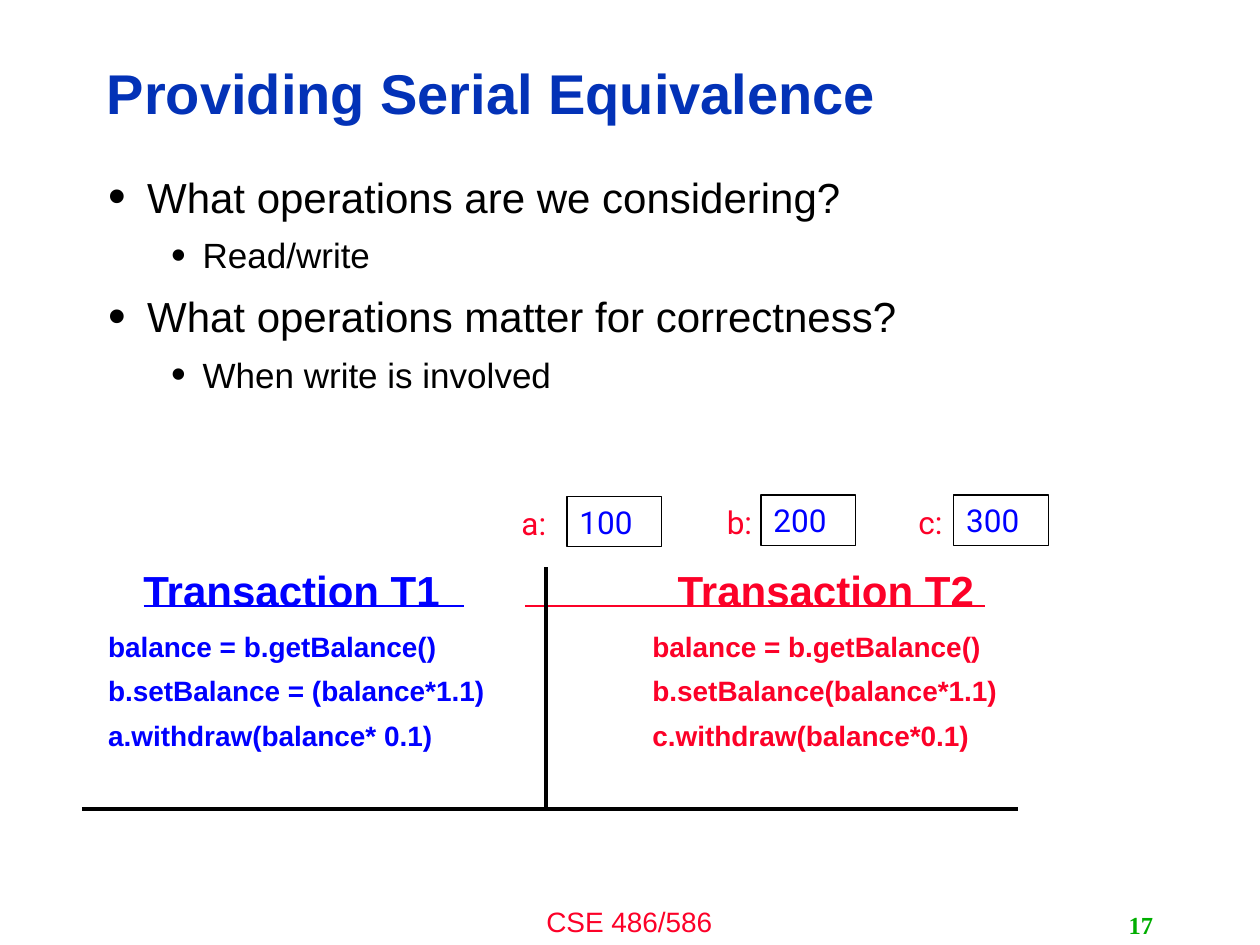
from lxml import etree
from pptx import Presentation
from pptx.dml.color import RGBColor
from pptx.enum.shapes import MSO_CONNECTOR, MSO_SHAPE
from pptx.enum.text import MSO_ANCHOR, PP_ALIGN
from pptx.oxml.ns import qn
from pptx.util import Inches, Pt

STRAIGHT = MSO_CONNECTOR.STRAIGHT
RECTANGLE = MSO_SHAPE.RECTANGLE
TOP, MIDDLE = MSO_ANCHOR.TOP, MSO_ANCHOR.MIDDLE
LEFT, CENTER, RIGHT = PP_ALIGN.LEFT, PP_ALIGN.CENTER, PP_ALIGN.RIGHT

CELL = Inches(0.1)
COLUMNS, ROWS = 100, 75
BLACK, BLUE, RED, NAVY, GREEN = "000000", "0000FF", "FC0128", "0332B7", "00AE00"

deck = Presentation()
deck.slide_width, deck.slide_height = COLUMNS * CELL, ROWS * CELL
slide = deck.slides.add_slide(deck.slide_layouts[6])


def write(text, frame, size=18, font="Arial", color=BLACK, bold=False, align=LEFT,
          anchor=TOP, spacing=1.0, before=0, hanging=None):
    frame.word_wrap = True
    frame.vertical_anchor = anchor
    first = frame.paragraphs[0]
    paragraph = frame.add_paragraph() if first.runs else first
    paragraph.alignment = align
    paragraph.line_spacing = spacing
    paragraph.space_before = Pt(before)
    run = paragraph.add_run()
    run.text = text
    run.font.size, run.font.name, run.font.bold = Pt(size), font, bold
    run.font.color.rgb = RGBColor.from_string(color)
    if hanging:
        margin, indent = hanging
        properties = paragraph._p.get_or_add_pPr()
        properties.set("marL", str(int(margin * CELL)))
        properties.set("indent", str(int(-indent * CELL)))
        etree.SubElement(properties, qn("a:buSzPct"), val="120000")
        etree.SubElement(properties, qn("a:buFont"), typeface="Arial")
        etree.SubElement(properties, qn("a:buChar"), char="•")


def rule(x1, y1, x2, y2, color=BLACK, width=2.25):
    ends = [int(value * CELL) for value in (x1, y1, x2, y2)]
    line = slide.shapes.add_connector(STRAIGHT, *ends)
    line.line.color.rgb = RGBColor.from_string(color)
    line.line.width = Pt(width)
    etree.SubElement(line._element.spPr, qn("a:effectLst"))


single_lines = [
    ("Providing Serial Equivalence", (7.5, 3.6, 79.8, 8.1),
     dict(size=32, color=NAVY, bold=True, anchor=MIDDLE, spacing=0.9)),
    ("CSE 486/586", (33.3, 71.3, 33.3, 3.7), dict(size=16, color=RED, align=CENTER)),
    ("17", (71.7, 71.8, 20.8, 3.2),
     dict(size=14, font="Times New Roman", color=GREEN, bold=True, align=RIGHT, anchor=MIDDLE)),
]
for text, place, style in single_lines:
    box = slide.shapes.add_textbox(*[int(value * CELL) for value in place])
    write(text, box.text_frame, **style)

questions = slide.shapes.add_textbox(
    *[int(value * CELL) for value in (7.6, 13.1, 84, 20)]).text_frame
for question, answer in [
    ("What operations are we considering?", "Read/write"),
    ("What operations matter for correctness?", "When write is involved"),
]:
    write(question, questions, size=24, before=8.5, hanging=(3.1, 3.1))
    write(answer, questions, size=20, before=7, hanging=(7.5, 2.5))

transactions = [
    ("Transaction T1", BLUE, 7.6, 10.4, (11.4, 36.8),
     ["balance = b.getBalance()", "b.setBalance = (balance*1.1)", "a.withdraw(balance* 0.1)"]),
    ("Transaction T2", RED, 50.8, 52.8, (41.7, 78.2),
     ["balance = b.getBalance()", "b.setBalance(balance*1.1)", "c.withdraw(balance*0.1)"]),
]
for heading, color, code_left, heading_left, underline, operations in transactions:
    title = slide.shapes.add_textbox(
        *[int(value * CELL) for value in (heading_left, 44.3, 28, 4.6)])
    write(heading, title.text_frame, size=24, color=color, bold=True)
    rule(underline[0], 48.1, underline[1], 48.1, color=color, width=1.5)
    code = slide.shapes.add_textbox(
        *[int(value * CELL) for value in (code_left, 49.5, 34, 11)])
    for operation in operations:
        write(operation, code.text_frame, size=16, color=color, bold=True, before=6)

rule(43.3, 45, 43.3, 64.2)
rule(6.5, 64.2, 80.8, 64.2)

for account, amount, label_left, value_left, top in [
    ("a:", "100", 40.4, 45, 39.4),
    ("b:", "200", 56.7, 60.4, 39.3),
    ("c:", "300", 71.9, 75.7, 39.3),
]:
    value = slide.shapes.add_shape(
        RECTANGLE, *[int(part * CELL) for part in (value_left, top, 7.5, 4)])
    value.shadow.inherit = False
    value.fill.background()
    value.line.color.rgb = RGBColor.from_string(BLACK)
    value.line.width = Pt(0.75)
    write(amount, value.text_frame, font="Roboto", color=BLUE)
    label = slide.shapes.add_textbox(
        *[int(part * CELL) for part in (label_left, top + 0.15, 5.6, 3.7)])
    write(account, label.text_frame, font="Roboto", color=RED)

deck.save("out.pptx")
